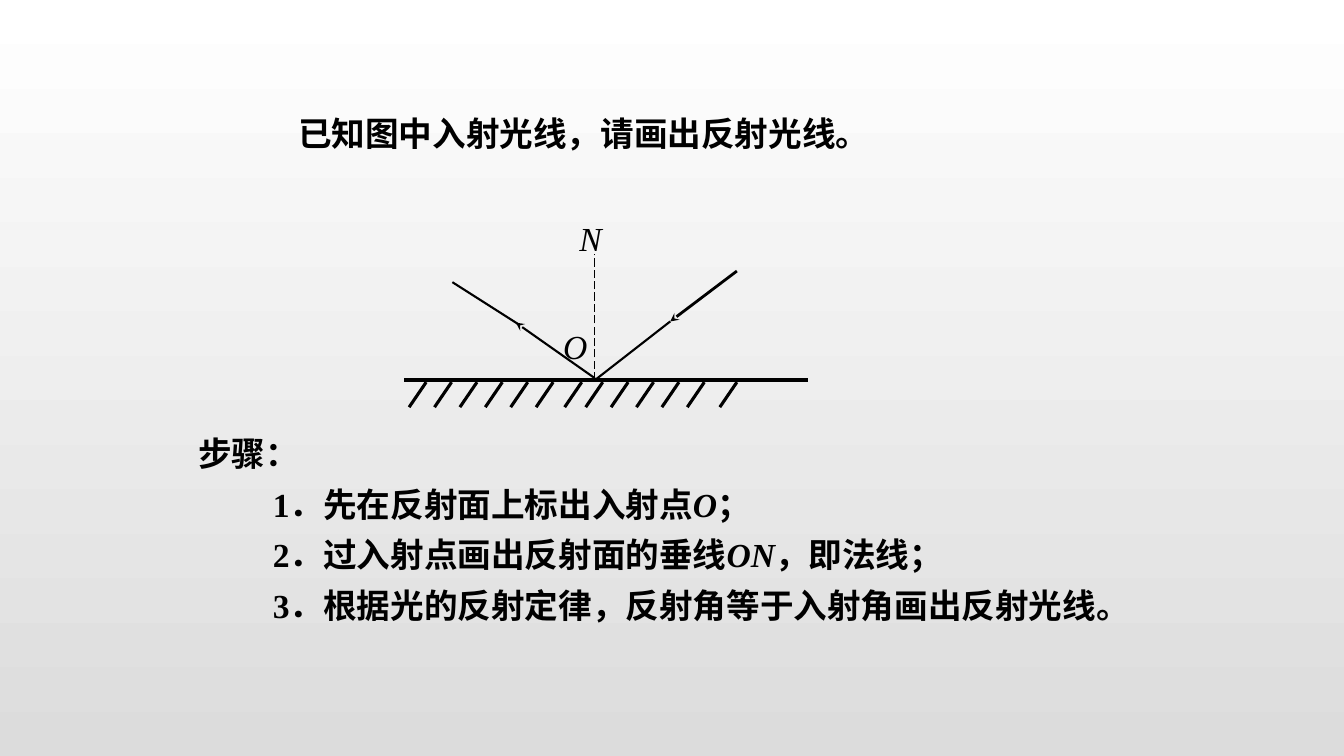
"""Builds a slide on drawing the reflected ray at a plane mirror."""
from dataclasses import dataclass

from lxml.etree import SubElement
from pptx import Presentation
from pptx.dml.color import RGBColor
from pptx.enum.dml import MSO_LINE
from pptx.enum.shapes import MSO_CONNECTOR
from pptx.enum.text import MSO_ANCHOR, MSO_AUTO_SIZE, PP_ALIGN
from pptx.oxml.ns import qn
from pptx.util import Cm, Pt

BLACK = RGBColor(0x00, 0x00, 0x00)
WHITE = RGBColor(0xFF, 0xFF, 0xFF)
GREY = RGBColor(0xDC, 0xDC, 0xDC)
CJK = "Noto Sans CJK SC"
SERIF = "Times New Roman"
HEADING = {"name": CJK, "bold": True, "italic": False}
PLAIN = {"name": SERIF, "bold": True, "italic": False}
POINT = {"name": SERIF, "bold": True, "italic": True}
LABEL = {"name": SERIF, "bold": False, "italic": True}

MIRROR_Y = 9.58
HATCH_TOP, HATCH_BOTTOM, HATCH_LEAN = 9.63, 10.26, 0.43
HATCH_STEP = 0.64
STEP_INDENT = 1.88


@dataclass(frozen=True)
class Box:
    left: float
    top: float
    width: float
    height: float


@dataclass(frozen=True)
class Line:
    start: tuple[float, float]
    end: tuple[float, float]
    weight: float
    dashed: bool = False
    arrow: bool = False


@dataclass(frozen=True)
class Step:
    runs: tuple[tuple[str, dict], ...]
    indent: float = 0


INCIDENCE = (14.99, MIRROR_Y)
RAYS = (
    Line((16.89, 8.1), INCIDENCE, 1.5),
    Line(INCIDENCE, (14.99, 6.4), 0.75, dashed=True),
    Line((18.57, 6.83), (16.89, 8.1), 2, arrow=True),
    Line((13.08, 8.18), (11.4, 7.11), 1.5),
    Line((14.99, 9.53), (13, 8.13), 1.5, arrow=True),
)
HATCHES = (
    *(10.74 + HATCH_STEP * i for i in range(6)),
    14.66,
    *(15.19 + HATCH_STEP * i for i in range(5)),
    18.57,
)
MIRROR = (
    Line((10.19, MIRROR_Y), (20.35, MIRROR_Y), 2.5),
    *(Line((x, HATCH_TOP), (x - HATCH_LEAN, HATCH_BOTTOM), 2.25) for x in HATCHES),
)
STEPS = (
    Step((("步骤：", PLAIN),)),
    Step((("1．先在反射面上标出入射点", PLAIN), ("O", POINT), ("；", PLAIN)), STEP_INDENT),
    Step((("2．过入射点画出反射面的垂线", PLAIN), ("ON", POINT), ("，即法线；", PLAIN)), STEP_INDENT),
    Step((("3．根据光的反射定律，反射角等于入射角画出反射光线。", PLAIN),), STEP_INDENT),
)
LABELS = (
    ("N", Box(14.35, 5.36, 1.27, 1.27)),
    ("O", Box(13.94, 8.1, 1.68, 1.27)),
)


def add_run(paragraph, text: str, style: dict) -> None:
    run = paragraph.add_run()
    run.text = text
    for attribute, value in {"size": Pt(24), **style}.items():
        setattr(run.font, attribute, value)
    run.font.color.rgb = BLACK
    SubElement(run.font._element, qn("a:ea"), typeface=CJK)


def prepare_frame(frame) -> None:
    settings = {
        "word_wrap": True,
        "auto_size": MSO_AUTO_SIZE.NONE,
        "vertical_anchor": MSO_ANCHOR.TOP,
    }
    for attribute, value in settings.items():
        setattr(frame, attribute, value)


def add_text(slide, box: Box):
    area = slide.shapes.add_textbox(Cm(box.left), Cm(box.top), Cm(box.width), Cm(box.height))
    prepare_frame(area.text_frame)
    return area.text_frame


def draw_line(shapes, line: Line) -> None:
    stroke = shapes.add_connector(
        MSO_CONNECTOR.STRAIGHT, *(Cm(value) for value in (*line.start, *line.end))
    )
    stroke.line.color.rgb = BLACK
    stroke.line.width = Pt(line.weight)
    if line.dashed:
        stroke.line.dash_style = MSO_LINE.LONG_DASH
    properties = stroke._element.spPr
    if line.arrow:
        SubElement(properties.find(qn("a:ln")), qn("a:tailEnd"), type="stealth")
    SubElement(properties, qn("a:effectLst"))


def paint_background(slide) -> None:
    fill = slide.background.fill
    fill.gradient()
    fill.gradient_angle = 270
    for stop, color, position in zip(fill.gradient_stops, (WHITE, GREY), (0, 1)):
        stop.color.rgb = color
        stop.position = position


def add_question(slide) -> None:
    question = slide.shapes.title
    place = {"left": 6.48, "top": 2.72, "width": 16.46, "height": 1.65}
    for attribute, value in place.items():
        setattr(question, attribute, Cm(value))
    prepare_frame(question.text_frame)
    paragraph = question.text_frame.paragraphs[0]
    paragraph.alignment = PP_ALIGN.CENTER
    add_run(paragraph, "已知图中入射光线，请画出反射光线。", HEADING)


def add_steps(slide) -> None:
    frame = add_text(slide, Box(4.75, 10.54, 24.21, 5.69))
    for index, step in enumerate(STEPS):
        paragraph = frame.add_paragraph() if index else frame.paragraphs[0]
        paragraph.line_spacing = 1.25
        paragraph._p.get_or_add_pPr().set("marL", str(Cm(step.indent)))
        for text, style in step.runs:
            add_run(paragraph, text, style)


def main() -> None:
    deck = Presentation()
    deck.slide_width, deck.slide_height = Cm(33.87), Cm(19.05)
    slide = deck.slides.add_slide(deck.slide_layouts.get_by_name("Title Only"))
    paint_background(slide)
    add_question(slide)
    add_steps(slide)
    mirror = slide.shapes.add_group_shape()
    for line in MIRROR:
        draw_line(mirror.shapes, line)
    for ray in RAYS:
        draw_line(slide.shapes, ray)
    for letter, box in LABELS:
        add_run(add_text(slide, box).paragraphs[0], letter, LABEL)
    deck.save("out.pptx")


if __name__ == "__main__":
    main()
